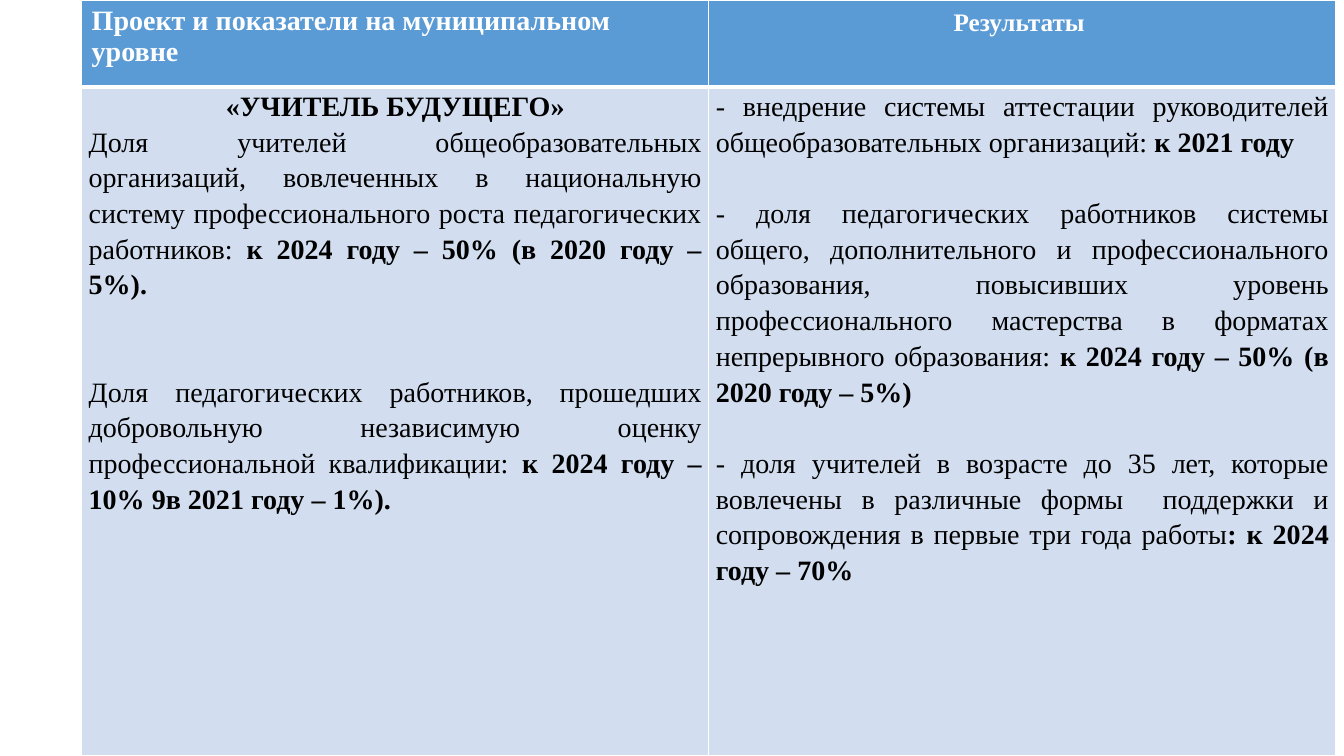
import dataclasses

import lxml.etree
import pptx
import pptx.dml.color
import pptx.enum.text
import pptx.oxml.ns
import pptx.util

Inches = pptx.util.Inches
Pt = pptx.util.Pt
Align = pptx.enum.text.PP_ALIGN


@dataclasses.dataclass(frozen=True)
class Theme:
    """Colours, font and sizes of the slide."""
    font: str = "Times New Roman"
    header_fill: str = "5B9BD5"
    body_fill: str = "D2DEEF"
    light: str = "FFFFFF"
    dark: str = "000000"
    large: int = 20
    small: int = 18
    line_spacing: float = 1.15
    blank_line: float = 25.5
    thin: int = 1
    thick: int = 3


@dataclasses.dataclass
class Paragraph:
    """Text runs as (text, bold) pairs, with layout values."""
    runs: list
    alignment: Align = Align.JUSTIFY
    blank_lines: int = 0
    line_spacing: float = Theme.line_spacing
    size: int = Theme.large


class SlideBuilder:
    """Adds styled elements to the current slide."""

    def __init__(self, slide, theme):
        self.slide = slide
        self.theme = theme

    def table(self, left, top, widths, heights):
        shape = self.slide.shapes.add_table(
            len(heights), len(widths), Inches(left), Inches(top),
            Inches(sum(widths)), Inches(sum(heights)))
        table = shape.table
        table.horz_banding = False
        for column, width in zip(table.columns, widths):
            column.width = Inches(width)
        for row, height in zip(table.rows, heights):
            row.height = Inches(height)
        return table

    def cell(self, cell, paragraphs, fill, color, formats, thick_side):
        for name, value in formats.items():
            setattr(cell, name, value)
        self.borders(cell, thick_side)
        cell.fill.solid()
        cell.fill.fore_color.rgb = pptx.dml.color.RGBColor.from_string(fill)
        frame = cell.text_frame
        for index, content in enumerate(paragraphs):
            paragraph = frame.add_paragraph() if index else frame.paragraphs[0]
            self.paragraph(paragraph, content, color)

    def paragraph(self, paragraph, content, color):
        formats = {"alignment": content.alignment,
                   "line_spacing": content.line_spacing,
                   "space_before": Pt(content.blank_lines * self.theme.blank_line)}
        for name, value in formats.items():
            setattr(paragraph, name, value)
        for text, bold in content.runs:
            run = paragraph.add_run()
            run.text = text
            font = {"name": self.theme.font, "size": Pt(content.size), "bold": bold}
            for name, value in font.items():
                setattr(run.font, name, value)
            run.font.color.rgb = pptx.dml.color.RGBColor.from_string(color)

    def borders(self, cell, thick_side):
        qn = pptx.oxml.ns.qn
        properties = cell._tc.get_or_add_tcPr()
        for side in "LRTB":
            width = self.theme.thick if side == thick_side else self.theme.thin
            line = lxml.etree.SubElement(properties, qn(f"a:ln{side}"), w=str(Pt(width)))
            fill = lxml.etree.SubElement(line, qn("a:solidFill"))
            lxml.etree.SubElement(fill, qn("a:srgbClr"), val=self.theme.light)


HEADERS = [
    [Paragraph([("Проект и показатели на муниципальном уровне", True)],
               Align.LEFT, line_spacing=1.0)],
    [Paragraph([("Результаты ", True)], Align.CENTER, size=Theme.small)],
]

BODIES = [
    [
        Paragraph([("«УЧИТЕЛЬ БУДУЩЕГО»", True)], Align.CENTER),
        Paragraph([("Доля учителей общеобразовательных организаций, вовлеченных в "
                    "национальную систему профессионального роста педагогических "
                    "работников: ", False),
                   ("к 2024 году – 50% (в 2020 году – 5%).", True)]),
        Paragraph([("Доля педагогических работников, прошедших добровольную "
                    "независимую оценку профессиональной квалификации: ", False),
                   ("к 2024 году – 10% 9в 2021 году – 1%).", True)], blank_lines=2),
    ],
    [
        Paragraph([("- внедрение системы аттестации руководителей "
                    "общеобразовательных организаций: ", False),
                   ("к 2021 году ", True)]),
        Paragraph([("- доля педагогических работников системы общего, "
                    "дополнительного и профессионального образования, повысивших "
                    "уровень профессионального мастерства в форматах непрерывного "
                    "образования: ", False),
                   ("к 2024 году – 50% (в 2020 году – 5%)", True)], blank_lines=1),
        Paragraph([("- доля учителей в возрасте до 35 лет, которые вовлечены в "
                    "различные формы  поддержки и сопровождения в первые три года "
                    "работы", False),
                   (": к 2024 году – 70%", True)], blank_lines=1),
    ],
]


def main():
    theme = Theme()
    presentation = pptx.Presentation()
    presentation.slide_width = Inches(13.33)
    presentation.slide_height = Inches(7.5)
    slide = presentation.slides.add_slide(presentation.slide_layouts[6])
    builder = SlideBuilder(slide, theme)
    table = builder.table(0.81, 0, [6.22, 6.22], [0.86, 6.64])
    body_margins = {"margin_left": Inches(0.07), "margin_right": Inches(0.07),
                    "margin_top": 0, "margin_bottom": 0}
    rows = [(HEADERS, theme.header_fill, theme.light, {}, "B"),
            (BODIES, theme.body_fill, theme.dark, body_margins, "T")]
    for row, (contents, *style) in enumerate(rows):
        for column, paragraphs in enumerate(contents):
            builder.cell(table.cell(row, column), paragraphs, *style)
    presentation.save("out.pptx")


if __name__ == "__main__":
    main()
